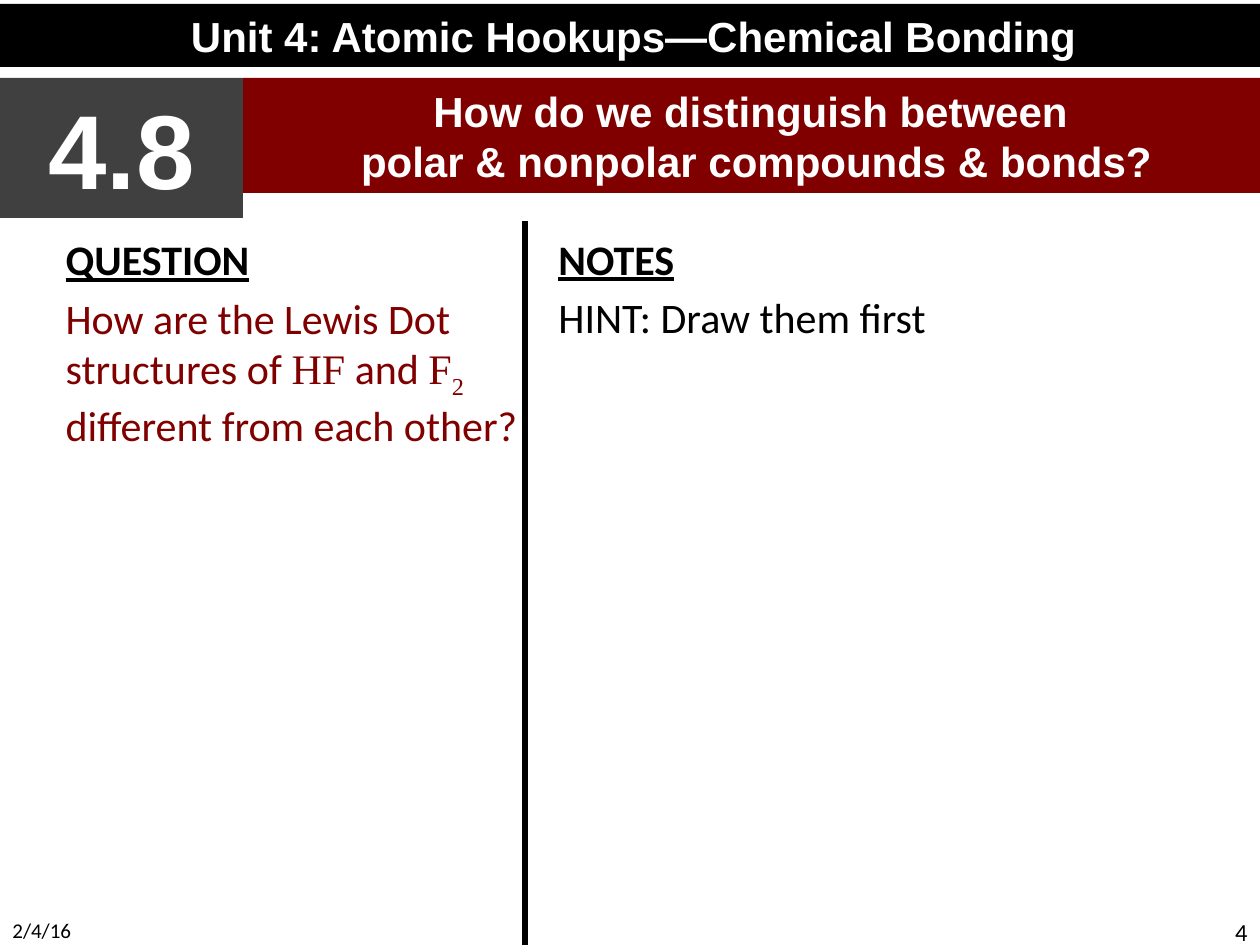
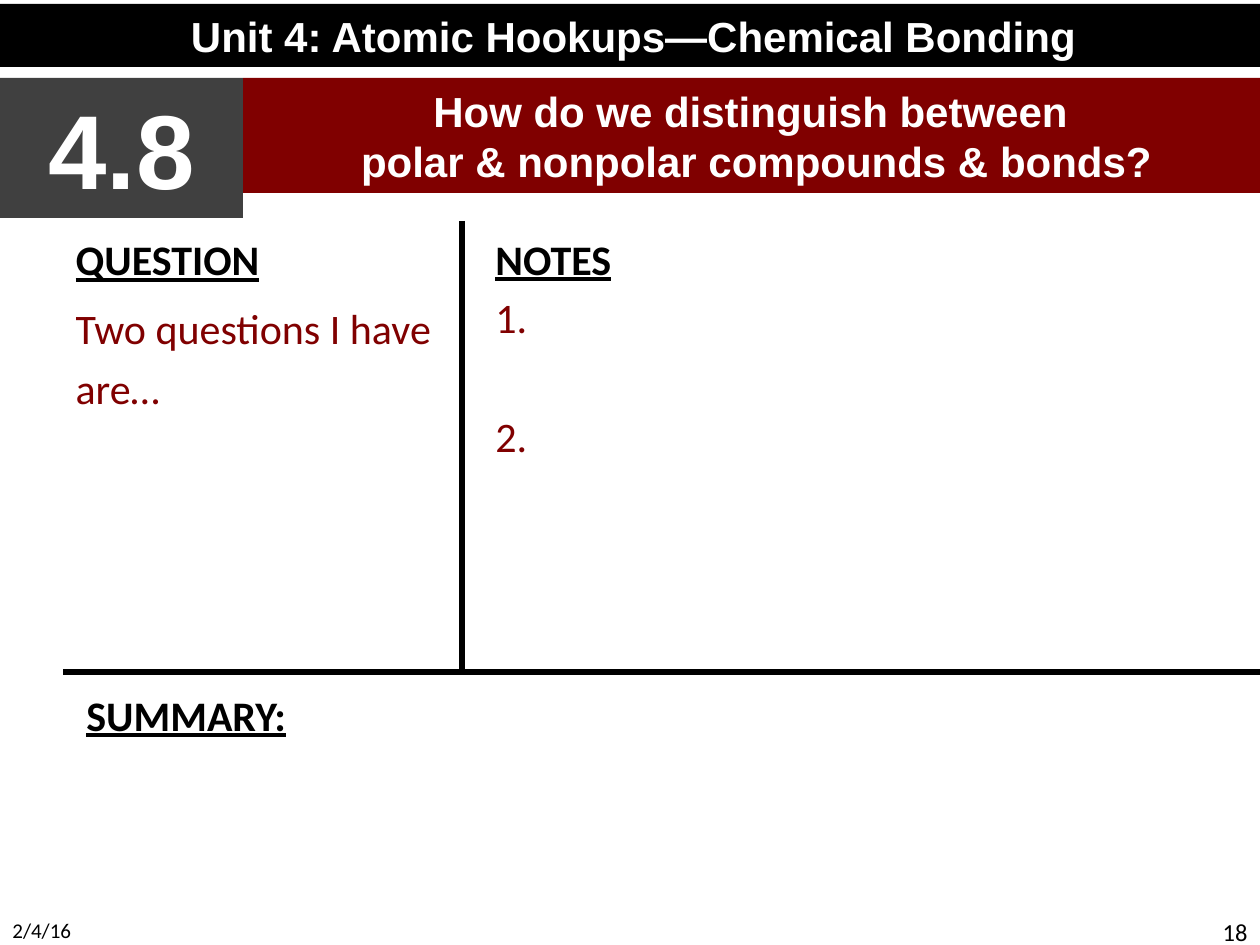
from lxml import etree
from pptx import Presentation
from pptx.dml.color import RGBColor
from pptx.enum.shapes import MSO_CONNECTOR, MSO_SHAPE
from pptx.enum.text import MSO_ANCHOR, MSO_AUTO_SIZE, PP_ALIGN
from pptx.oxml.ns import qn
from pptx.util import Pt

SCALE = 914400 / 126  # EMU in one px
WIDE, HIGH = 1260, 945

BLACK = RGBColor(0x00, 0x00, 0x00)
WHITE = RGBColor(0xFF, 0xFF, 0xFF)
GRAY = RGBColor(0x40, 0x40, 0x40)
MAROON = RGBColor(0x80, 0x00, 0x00)

# Text looks
PLAIN = dict(name="Calibri", size=Pt(24), color=BLACK)
HEAD = dict(PLAIN, bold=True, underline=True)
ASK = dict(PLAIN, color=MAROON)
CHEM = dict(ASK, name="Times New Roman")
BAND = dict(name="Arial", size=Pt(24), bold=True, underline=False, color=WHITE)
BADGE = dict(BAND, size=Pt(60))
DATE = dict(PLAIN, size=Pt(12))
PAGE = dict(PLAIN, size=Pt(14))

# Paragraph formats
NEXT = dict(space_before=Pt(4.8))
LOOSE = dict(NEXT, line_spacing=1.2)
APART = dict(space_before=Pt(39))
MID = dict(alignment=PP_ALIGN.CENTER)
RIGHT = dict(alignment=PP_ALIGN.RIGHT)

RULE = 221  # top of the column divider
TOP = 227  # top of the columns


def emu(*px):
    return [round(n * SCALE) for n in px]


def place(shape, box):
    for key, val in zip(("left", "top", "width", "height"), emu(*box)):
        setattr(shape, key, val)


def style(font, look):
    for key, val in look.items():
        if key == "color":
            font.color.rgb = val
        else:
            setattr(font, key, val)


def write(frame, paras, anchor=MSO_ANCHOR.TOP, bare=False):
    """Each paragraph is (format, run, run, ...), each run (text, look[, base])."""
    frame.word_wrap = True
    frame.auto_size = MSO_AUTO_SIZE.NONE
    frame.vertical_anchor = anchor
    for num, (form, *runs) in enumerate(paras):
        para = frame.add_paragraph() if num else frame.paragraphs[0]
        if bare:  # drop the template's bullet and indent
            props = para._p.get_or_add_pPr()
            props.set("marL", "0")
            props.set("indent", "0")
            etree.SubElement(props, qn("a:buNone"))
            para.space_before = Pt(0)
        for key, val in form.items():
            setattr(para, key, val)
        for text, look, *base in runs:
            run = para.add_run()
            run.text = text
            style(run.font, look)
            if base:
                run._r.get_or_add_rPr().set("baseline", str(base[0] * 1000))


def label(slide, box, paras):
    write(slide.shapes.add_textbox(*emu(*box)).text_frame, paras)


def fill(shape, color):
    shape.fill.solid()
    shape.fill.fore_color.rgb = color
    shape.line.fill.background()


def block(slide, box, color, text, look):
    shape = slide.shapes.add_shape(MSO_SHAPE.RECTANGLE, *emu(*box))
    shape.shadow.inherit = False
    fill(shape, color)
    write(shape.text_frame, [(MID, (text, look))], MSO_ANCHOR.MIDDLE)


def line(slide, *ends):
    rule = slide.shapes.add_connector(MSO_CONNECTOR.STRAIGHT, *emu(*ends))
    rule.line.color.rgb = BLACK
    rule.line.width = Pt(3)
    etree.SubElement(rule._element.spPr, qn("a:effectLst"))


def header(slide, box):
    left, top, wide, high = box
    # Unit band
    block(slide, (left, top, wide, 63), BLACK,
          "Unit 4: Atomic Hookups—Chemical Bonding", BAND)
    # Lesson badge
    side, drop = 243, top + 74
    block(slide, (left, drop, side, high - 74), GRAY, "4.8", BADGE)
    # Lesson title
    title = slide.shapes.title
    place(title, (left + side, drop, wide - side + 3, 115))
    fill(title, MAROON)
    write(title.text_frame, [
        (MID, ("How do we distinguish between ", BAND)),
        (MID, ("polar & nonpolar compounds & bonds?", BAND)),
    ], MSO_ANCHOR.MIDDLE)


def footer(slide, box, page):
    left, top, wide, high = box
    part = 294
    label(slide, (left, top, part, high), [({}, ("2/4/16", DATE))])
    label(slide, (left + wide - part, top, part, high),
          [(RIGHT, (page, PAGE))])


def columns(slide, box, split, ask, notes):
    """Question on the left, notes on the right of a divider at split."""
    left, top, wide, high = box
    body = slide.placeholders[1]
    # The question may run up to the notes column
    place(body, (left, top, split + 21 - left, high))
    write(body.text_frame, [({}, ("QUESTION", HEAD)), ask], bare=True)
    label(slide, (split + 21, top, left + wide - split - 21, high),
          [({}, ("NOTES", HEAD)), *notes])


def frame(deck, page):
    slide = deck.slides.add_slide(deck.slide_layouts[1])
    header(slide, (0, 4, 1267, 214))
    footer(slide, (0, 911, WIDE, 34), page)
    return slide


def compare(deck):
    slide = frame(deck, "4")
    split = 525
    line(slide, split, RULE, split, HIGH)
    ask = (NEXT, ("How are the Lewis Dot structures of ", ASK), ("HF", CHEM),
           (" and ", ASK), ("F", CHEM), ("2", CHEM, -25),
           (" different from each other?", ASK))
    columns(slide, (53, TOP, WIDE - 53, 624), split, ask,
            [(NEXT, ("HINT: Draw them first", PLAIN))])


def wrap(deck):
    slide = frame(deck, "18")
    split, base = 462, 672
    line(slide, split, RULE, split, base)
    line(slide, WIDE, base, 63, base)
    columns(slide, (63, TOP, WIDE - 63, 435), split,
            (LOOSE, ("Two questions I have are…", ASK)),
            [(NEXT, ("1.", ASK)), (APART, ("2.", ASK))])
    # Summary
    label(slide, (74, base + 11, WIDE - 74, 262), [({}, ("SUMMARY:", HEAD))])


def main():
    deck = Presentation()
    deck.slide_width, deck.slide_height = emu(WIDE, HIGH)
    compare(deck)
    wrap(deck)
    deck.save("out.pptx")


if __name__ == "__main__":
    main()
